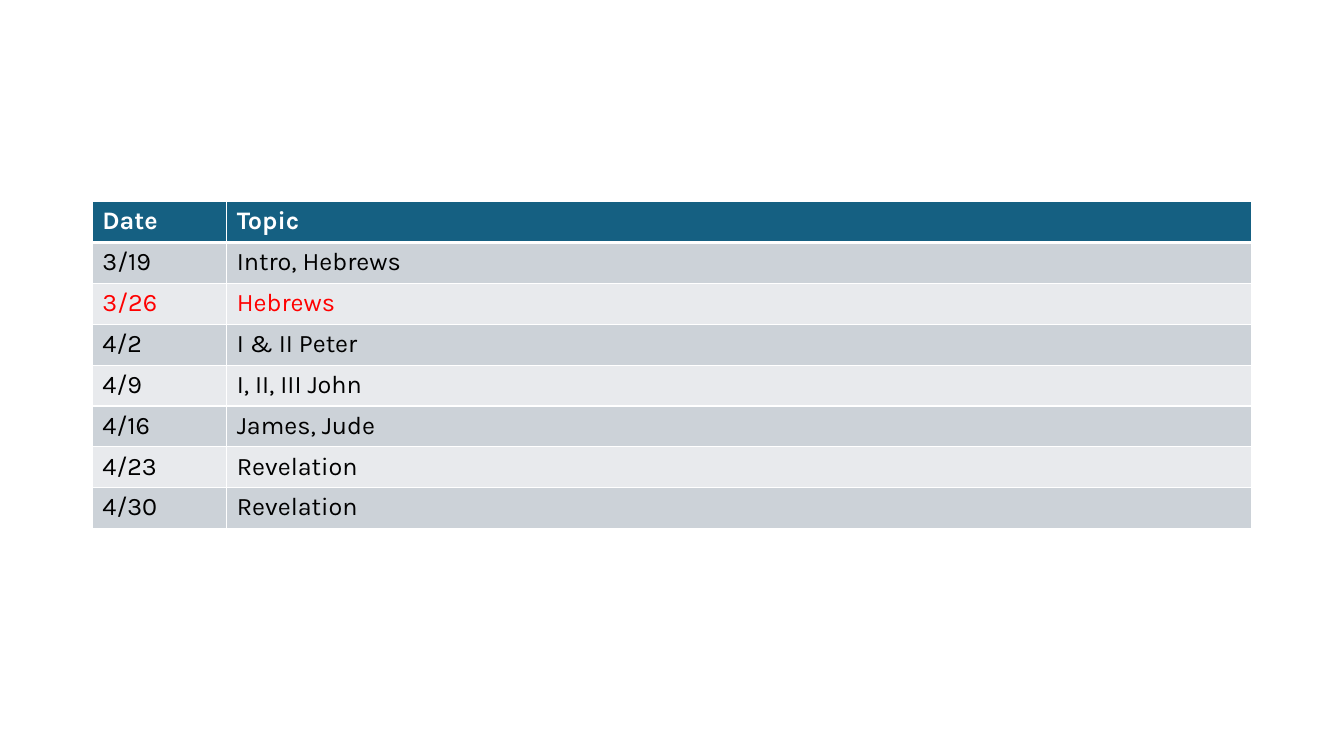
from pptx import Presentation
from pptx.dml.color import RGBColor
from pptx.oxml import parse_xml
from pptx.oxml.ns import nsdecls
from pptx.util import Pt

WHITE = RGBColor(0xFF, 0xFF, 0xFF)
BLACK = RGBColor(0, 0, 0)
RED = RGBColor(0xFF, 0, 0)
TEAL = RGBColor(0x15, 0x60, 0x82)
BANDS = [RGBColor(0xCC, 0xD2, 0xD8), RGBColor(0xE8, 0xEA, 0xED)]

SCHEDULE = [
    ("Date", "Topic"),
    ("3/19", "Intro, Hebrews"),
    ("3/26", "Hebrews"),
    ("4/2", "I & II Peter"),
    ("4/9", "I, II, III John"),
    ("4/16", "James, Jude"),
    ("4/23", "Revelation"),
    ("4/30", "Revelation"),
]
HIGHLIGHTED = "3/26"
COLUMN_WIDTHS = [96, 732]
ROW_HEIGHT = 29.2


def set_borders(cell, top, bottom):
    tc_pr = cell._tc.get_or_add_tcPr()
    for side, width in (("L", 1), ("R", 1), ("T", top), ("B", bottom)):
        tc_pr.append(parse_xml(
            f'<a:ln{side} {nsdecls("a")} w="{Pt(width)}"><a:solidFill>'
            f'<a:srgbClr val="{WHITE}"/></a:solidFill></a:ln{side}>'))


def fill_cell(cell, label, fill, color, bold):
    cell.fill.solid()
    cell.fill.fore_color.rgb = fill
    cell.text = label
    font = cell.text_frame.paragraphs[0].font
    font.name = "Karla"
    font.size = Pt(18)
    font.bold = bold
    font.color.rgb = color


def add_schedule(s, left, top):
    table = s.shapes.add_table(
        len(SCHEDULE), len(COLUMN_WIDTHS), Pt(left), Pt(top),
        Pt(sum(COLUMN_WIDTHS)), Pt(ROW_HEIGHT * len(SCHEDULE))).table
    for column, width in zip(table.columns, COLUMN_WIDTHS):
        column.width = Pt(width)
    for i, labels in enumerate(SCHEDULE):
        table.rows[i].height = Pt(ROW_HEIGHT)
        header = i == 0
        if header:
            fill, color = TEAL, WHITE
        else:
            fill = BANDS[(i - 1) % 2]
            color = RED if labels[0] == HIGHLIGHTED else BLACK
        for cell, label in zip(table.rows[i].cells, labels):
            set_borders(cell, 3 if i == 1 else 1, 3 if header else 1)
            fill_cell(cell, label, fill, color, header)


def main():
    prs = Presentation()
    prs.slide_width, prs.slide_height = Pt(960), Pt(540)
    s = prs.slides.add_slide(prs.slide_layouts[6])
    add_schedule(s, 66, 144)
    prs.save("out.pptx")


if __name__ == "__main__":
    main()
